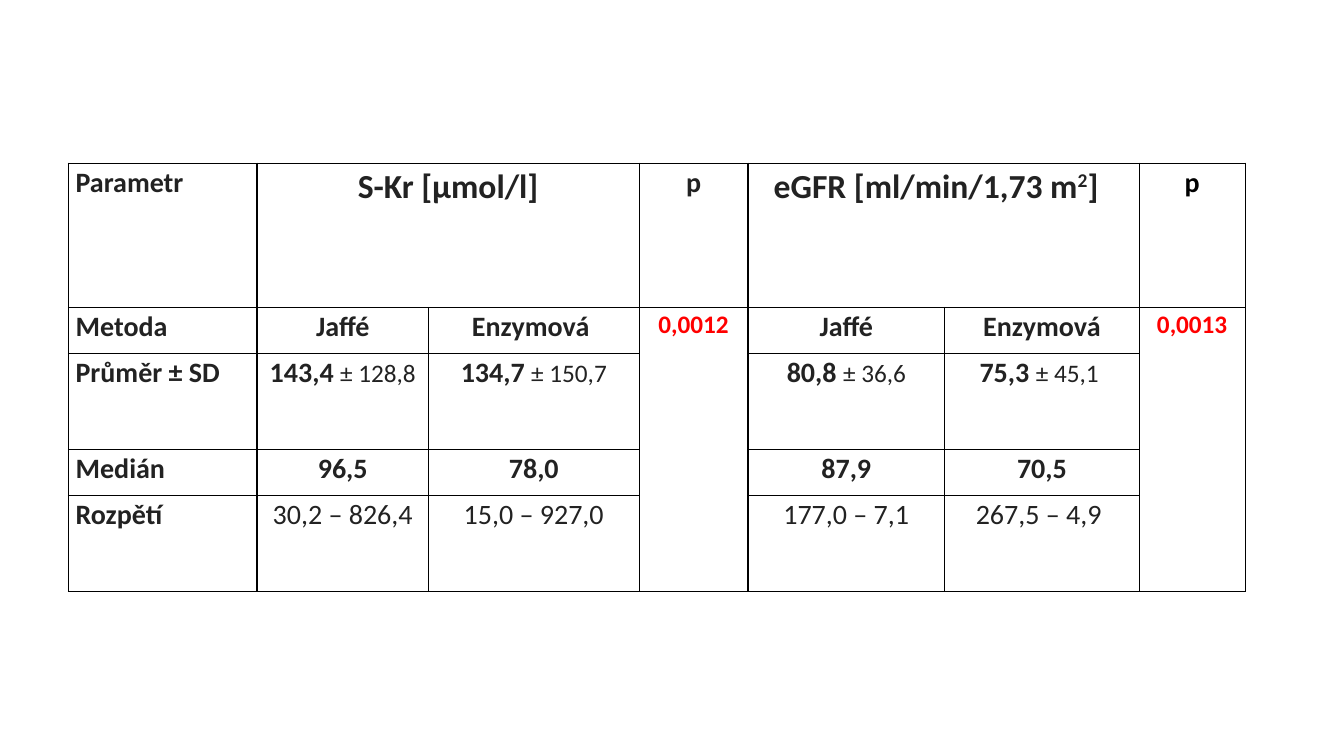
"""Build a slide with a table comparing two creatinine methods."""
from dataclasses import dataclass

from lxml import etree
from pptx import Presentation, util as u
from pptx.dml.color import RGBColor
from pptx.enum import text as t
from pptx.oxml import ns


@dataclass(frozen=True)
class Theme:
    font: str = "Calibri"
    ink: str = "222222"
    black: str = "000000"
    red: str = "FF0000"
    head: int = 24
    body: int = 20
    small: int = 18
    line: float = 1
    lead: float = 1.07


@dataclass(frozen=True)
class Run:
    text: str
    size: int = Theme.body
    color: str = Theme.ink
    bold: bool = True
    base: int = 0


@dataclass(frozen=True)
class Cell:
    row: int
    col: int
    runs: tuple[Run, ...]
    down: int = 1
    across: int = 1
    pad: int = 7


THEME = Theme()
WIDE, HIGH = u.Inches(13.33), u.Inches(7.5)
GRID_COLS, GRID_ROWS = 1333, 750
LEFT, TOP, INSET = 68, 162, 7
COLS = (187, 170, 209, 108, 195, 193, 105)
ROWS = (143, 46, 95, 46, 95)
LABELS = ("Parametr", "Metoda", "Průměr ± SD", "Medián", "Rozpětí")
DATA = {
    1: ("Jaffé", "143,4 ", "± 128,8", "96,5", "30,2 – 826,4"),
    2: ("Enzymová ", "134,7 ", "± 150,7", "78,0", "15,0 – 927,0"),
    4: ("Jaffé", "80,8 ", "± 36,6", "87,9", "177,0 – 7,1"),
    5: ("Enzymová", "75,3 ", "± 45,1 ", "70,5", "267,5 – 4,9 "),
}


def across(n: float) -> int:
    """Turn grid columns into a length."""
    return round(WIDE * n / GRID_COLS)


def down(n: float) -> int:
    """Turn grid rows into a length."""
    return round(HIGH * n / GRID_ROWS)


def write(para, text: str, *, size: int, color: str, bold: bool, base: int) -> None:
    """Add one formatted run to a paragraph."""
    run = para.add_run()
    run.text = text
    font = run.font
    font.name, font.size, font.bold = THEME.font, u.Pt(size), bold
    font.color.rgb = RGBColor.from_string(color)
    if base:
        run._r.get_or_add_rPr().set("baseline", str(base * 1000))


def frame(cell) -> None:
    """Clear a cell's fill, set its insets and rule its four sides."""
    cell.fill.background()
    cell.margin_left = cell.margin_right = across(INSET)
    cell.margin_top = cell.margin_bottom = 0
    props = cell._tc.get_or_add_tcPr()
    for i, side in enumerate(("lnL", "lnR", "lnT", "lnB")):
        edge = etree.Element(ns.qn(f"a:{side}"), w=str(u.Pt(THEME.line)))
        fill = etree.SubElement(edge, ns.qn("a:solidFill"))
        etree.SubElement(fill, ns.qn("a:srgbClr"), val=THEME.black)
        props.insert(i, edge)


def fill(table, item: Cell) -> None:
    """Merge a cell where it spans and write its runs."""
    cell = table.cell(item.row, item.col)
    if item.down * item.across > 1:
        cell.merge(table.cell(item.row + item.down - 1, item.col + item.across - 1))
    cell.margin_right = across(item.pad)
    para = cell.text_frame.paragraphs[0]
    para.line_spacing = THEME.lead
    para.alignment = t.PP_ALIGN.CENTER if item.col else t.PP_ALIGN.LEFT
    for run in item.runs:
        write(para, run.text, size=run.size, color=run.color, bold=run.bold, base=run.base)


def cells() -> list[Cell]:
    """List every cell that holds text."""
    big = THEME.head
    out = [Cell(row, 0, (Run(label),)) for row, label in enumerate(LABELS)]
    out += [
        Cell(0, 1, (Run("S-Kr [μmol/l]", big),), across=2),
        Cell(0, 4, (Run("eGFR [ml/min/1,73 m", big), Run("2", big, base=30), Run("]", big)),
             across=2, pad=22),
    ]
    for col, color, value in ((3, THEME.ink, "0,0012"), (6, THEME.black, "0,0013")):
        out += [
            Cell(0, col, (Run("p", color=color),)),
            Cell(1, col, (Run(value, THEME.small, THEME.red),), down=4),
        ]
    for col, (method, mean, dev, mid, span) in DATA.items():
        out += [
            Cell(1, col, (Run(method),)),
            Cell(2, col, (Run(mean), Run(dev, THEME.small, bold=False))),
            Cell(3, col, (Run(mid),)),
            Cell(4, col, (Run(span, bold=False),)),
        ]
    return out


def main() -> None:
    """Build and save the slide."""
    deck = Presentation()
    deck.slide_width, deck.slide_height = WIDE, HIGH
    slide = deck.slides.add_slide(deck.slide_layouts[6])
    table = slide.shapes.add_table(
        len(ROWS), len(COLS), across(LEFT), down(TOP), across(sum(COLS)), down(sum(ROWS))
    ).table
    table.first_row = table.horz_banding = False
    for col, n in zip(table.columns, COLS):
        col.width = across(n)
    for row, n in zip(table.rows, ROWS):
        row.height = down(n)
    for cell in table.iter_cells():
        frame(cell)
    for item in cells():
        fill(table, item)
    deck.save("out.pptx")


if __name__ == "__main__":
    main()
